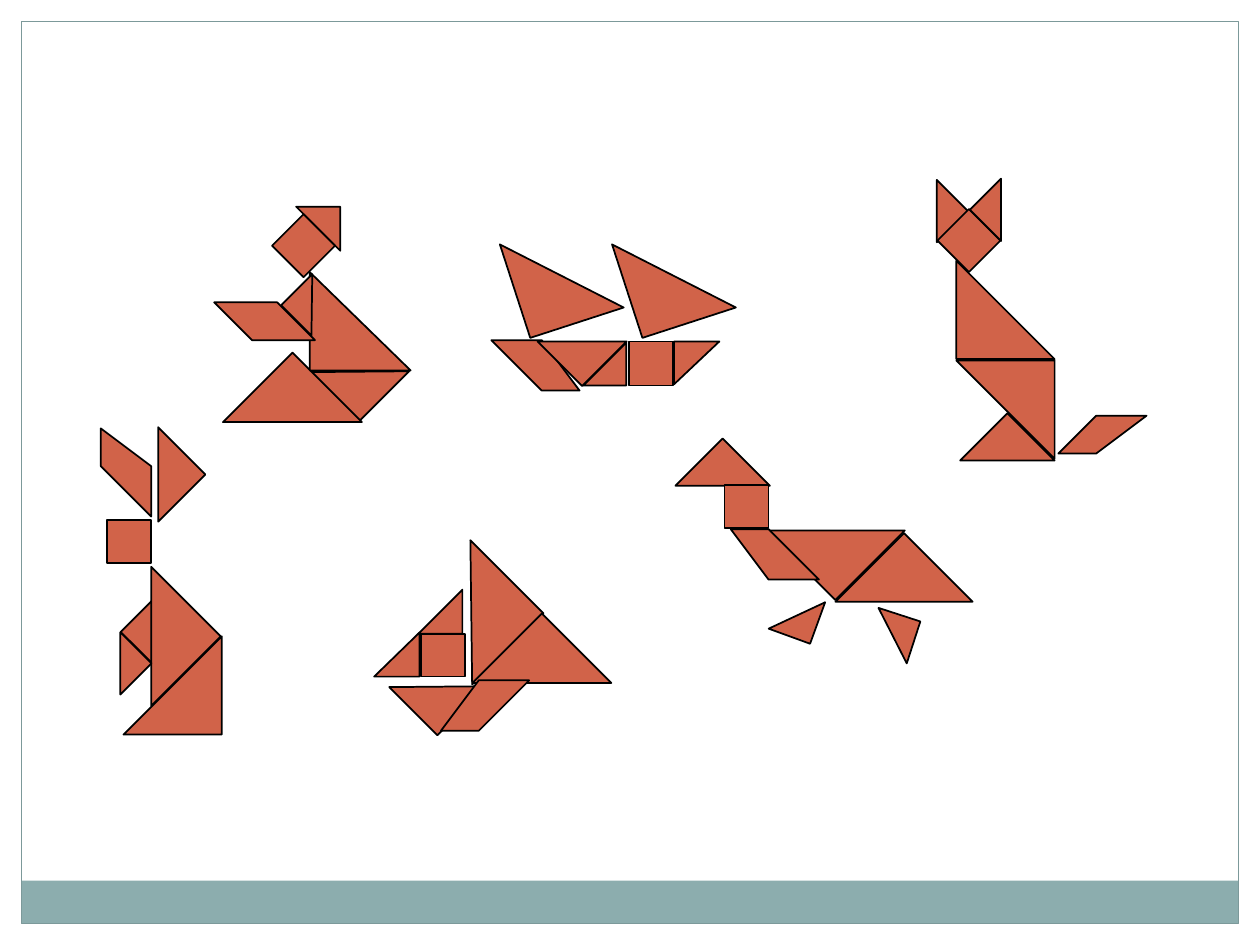
from collections import namedtuple
from pptx import Presentation
from pptx.dml.color import RGBColor
from pptx.enum.shapes import MSO_SHAPE as Shape
from pptx.oxml.ns import qn
from pptx.util import Inches, Pt

COLUMNS, ROWS = 100, 75
CELL = Inches(10) // COLUMNS
CLAY, BLACK, WHITE = "D16349", "000000", "FFFFFF"
TEAL, FRAME = "8CADAE", "7C999A"
SMALL, MEDIUM, LARGE = (3.5, 3.5), (5.3, 5.3), (7.8, 7.8)
SQUARE, DIAMOND = (3.5, 3.4), (5, 5)

Box = namedtuple("Box", "left top")
Piece = namedtuple("Piece", "kind x y size turn flip")
Slant = namedtuple("Slant", "points")


def triangle(x, y, size, turn=0, flip=False):
    return Piece(Shape.RIGHT_TRIANGLE, x, y, size, turn, flip)


def square(x, y, size=SQUARE):
    return Piece(Shape.RECTANGLE, x, y, size, 0, False)


def diamond(x, y):
    return Piece(Shape.DIAMOND, x, y, DIAMOND, 0, False)


def slant(*points):
    return Slant(points)


CAT = [
    triangle(0.6, 1, SMALL, 315, True),
    triangle(5.3, 19.9, MEDIUM, 225, True),
    diamond(2.4, 2.6),
    triangle(3.9, 6.7, LARGE, 90, True),
    triangle(5.7, 0.9, SMALL, 135, True),
    triangle(3.9, 14.6, LARGE, 180),
    slant((18.9, 18.9), (15.3, 18.9), (11.8, 22.4), (15.3, 22.4)),
]
SHIP = [
    triangle(14.5, 9.1, (3.6, 3.4), 180, True),
    triangle(1.7, 0, LARGE, 72, True),
    slant((0.1, 9.1), (3.6, 9.1), (7.1, 12.7), (3.6, 12.7)),
    square(10.9, 9.1, SMALL),
    triangle(10.6, 0, LARGE, 72, True),
    triangle(4.7, 6.6, (5, 5), 315),
    triangle(7.3, 9.2, (3.4, 3.4), 270),
]
RABBIT = [
    triangle(3.3, 15.4, SMALL, 45),
    triangle(2.9, 2, MEDIUM, 225),
    triangle(1.1, 13.6, LARGE, 225),
    triangle(0.8, 17.9, SMALL, 225),
    triangle(2.8, 17.5, LARGE, 270),
    slant((1.4, 0.6), (1.4, 4.2), (5, 7.7), (5, 4.1)),
    square(1.5, 8.3),
]
SAILBOAT = [
    triangle(0.7, 6.2, (3.6, 3.5), flip=True),
    triangle(3, 7.8, (5.5, 5.4), 315),
    triangle(4.3, 0.6, (8.2, 8), 225),
    triangle(4.2, 2.8, SMALL, flip=True),
    triangle(10.1, 6.3, LARGE, 225, True),
    slant((5.8, 14.3), (9.4, 14.3), (13, 10.5), (9.4, 10.5)),
    square(4.4, 6.3),
]
SITTER = [
    triangle(8.8, 10.7, (5.5, 5.6), 45, True),
    triangle(2.3, 13.6, LARGE, 225, True),
    triangle(6.5, 0.4, SMALL, 270, True),
    triangle(7.7, 5.5, (7.8, 8), 90, True),
    triangle(6, 6.5, (3.5, 3.4), 135, True),
    slant((0.2, 8.1), (2.7, 10.7), (7.7, 10.7), (5.2, 8.1)),
    diamond(4.6, 1),
]
DUCK = [
    triangle(7.5, 12.1, SMALL, 20, True),
    triangle(0.7, 0.9, MEDIUM, 135),
    triangle(13.9, 8.9, (7.7, 7.7), 135),
    triangle(15.1, 13.7, SMALL, 288, True),
    triangle(8.4, 3.2, LARGE, 315),
    slant((10.7, 11), (7.1, 11), (3.6, 7.2), (7.2, 7.2)),
    square(3.5, 3.5),
]
FIGURES = [
    (Box(72, 14), CAT), (Box(39, 18), SHIP), (Box(7, 33), RABBIT),
    (Box(29, 44), SAILBOAT), (Box(17, 16), SITTER), (Box(54, 35), DUCK),
]


def cells(*counts):
    return [round(count * CELL) for count in counts]


def color(code):
    return RGBColor.from_string(code)


def paint(shape, fill=None, line=None, width=1):
    shape.shadow.inherit = False
    if fill:
        shape.fill.solid()
        shape.fill.fore_color.rgb = color(fill)
    else:
        shape.fill.background()
    if line:
        shape.line.color.rgb = color(line)
        shape.line.width = Pt(width)
    else:
        shape.line.fill.background()


def add_piece(shapes, box, piece):
    left, top = box.left + piece.x, box.top + piece.y
    shape = shapes.add_shape(piece.kind, *cells(left, top, *piece.size))
    shape.rotation = piece.turn
    if piece.flip:
        shape._element.spPr.find(qn("a:xfrm")).set("flipH", "1")
    return shape


def add_slant(shapes, box, piece):
    corners = [(box.left + x, box.top + y) for x, y in piece.points]
    builder = shapes.build_freeform(*corners[0], scale=CELL)
    builder.add_line_segments(corners[1:], close=True)
    return builder.convert_to_shape()


def draw_figure(page, box, pieces):
    shapes = page.shapes.add_group_shape().shapes
    for piece in pieces:
        add = add_slant if isinstance(piece, Slant) else add_piece
        paint(add(shapes, box, piece), CLAY, BLACK)


def draw_frame(page, margin=1.7, band=3.4):
    inner_width, inner_height = COLUMNS - 2 * margin, ROWS - 2 * margin
    bars = [
        (0, 0, COLUMNS, margin, WHITE, None),
        (COLUMNS - margin, 0, margin, ROWS, WHITE, None),
        (0, 0, margin, ROWS, WHITE, None),
        (margin, ROWS - margin - band, inner_width, band, TEAL, None),
        (margin, margin, inner_width, inner_height, None, FRAME),
    ]
    for *place, fill, line in bars:
        bar = page.shapes.add_shape(Shape.RECTANGLE, *cells(*place))
        paint(bar, fill, line, 0.75)


def main():
    deck = Presentation()
    deck.slide_width, deck.slide_height = cells(COLUMNS, ROWS)
    page = deck.slides.add_slide(deck.slide_layouts[6])
    page.background.fill.solid()
    page.background.fill.fore_color.rgb = color(WHITE)
    draw_frame(page)
    for box, pieces in FIGURES:
        draw_figure(page, box, pieces)
    deck.save("out.pptx")


if __name__ == "__main__":
    main()
